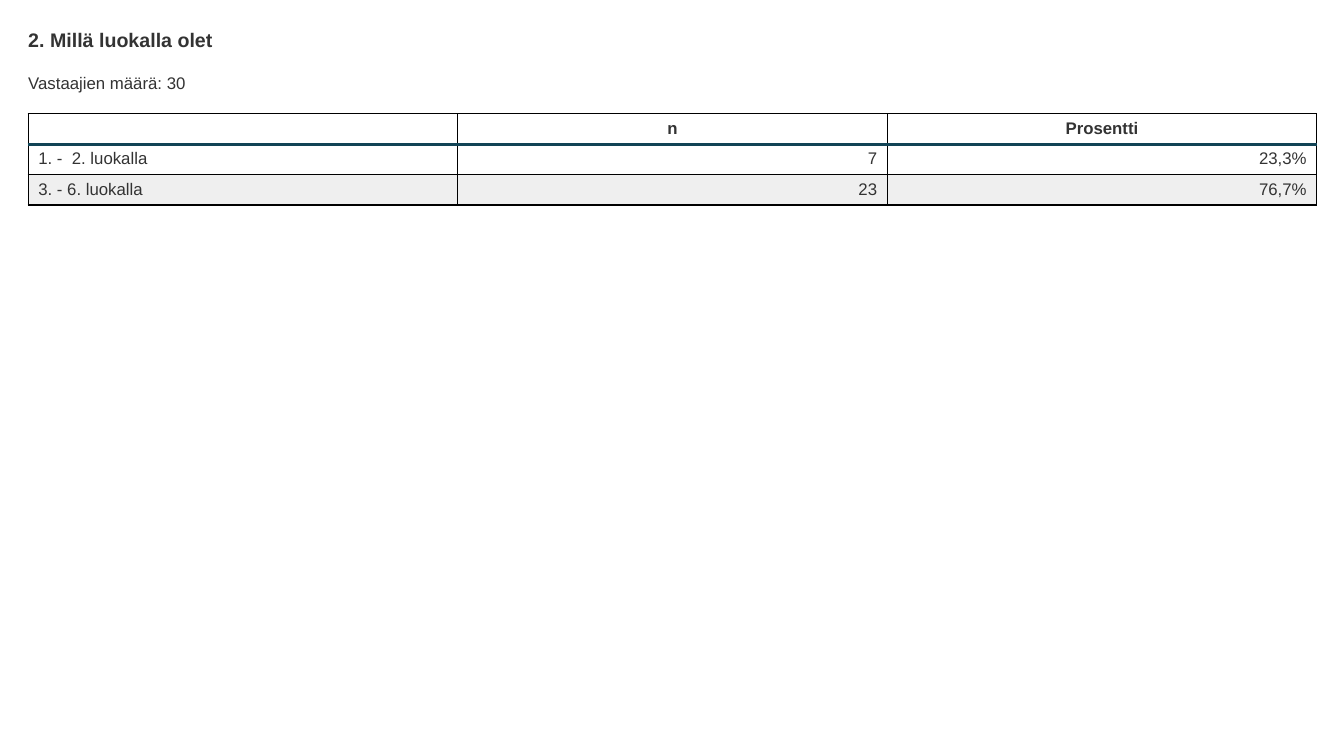
from lxml.etree import SubElement
from pptx import Presentation
from pptx.dml.color import RGBColor
from pptx.enum.text import MSO_ANCHOR, MSO_AUTO_SIZE, PP_ALIGN
from pptx.oxml.ns import qn
from pptx.util import Inches, Pt

COLORS = {
    "text": "333333",
    "border": "000000",
    "header_line": "124456",
    "white": "FFFFFF",
    "band": "EFEFEF",
}
LEFT, WIDTH, ROW_HEIGHT = 0.28, 12.78, 0.3


def format_text(text_frame, text, size, bold=False, alignment=PP_ALIGN.LEFT):
    text_frame.text = text
    paragraph = text_frame.paragraphs[0]
    paragraph.alignment = alignment
    for run in paragraph.runs:
        run.font.name = "Arial"
        run.font.size = Pt(size)
        run.font.bold = bold
        run.font.color.rgb = RGBColor.from_string(COLORS["text"])
    if not text:
        SubElement(paragraph._p, qn("a:endParaRPr"), sz=str(size * 100))


def add_border(cell, side, color, width):
    line = SubElement(cell._tc.get_or_add_tcPr(), qn(f"a:ln{side}"), w=str(Pt(width)))
    fill = SubElement(line, qn("a:solidFill"))
    SubElement(fill, qn("a:srgbClr"), val=COLORS[color])


presentation = Presentation()
presentation.slide_width = Inches(13.33)
presentation.slide_height = Inches(7.5)
slide = presentation.slides.add_slide(presentation.slide_layouts[5])

title = slide.shapes.title
title.left, title.top = Inches(LEFT), Inches(0.28)
title.width, title.height = Inches(WIDTH), Inches(0.23)
respondents = slide.shapes.add_textbox(
    Inches(LEFT), Inches(0.72), Inches(WIDTH), Inches(0.2)
)
for shape, text, size, bold in (
    (title, "2. Millä luokalla olet", 14, True),
    (respondents, "Vastaajien määrä: 30", 12, False),
):
    text_frame = shape.text_frame
    text_frame.margin_left = text_frame.margin_right = 0
    text_frame.margin_top = text_frame.margin_bottom = 0
    text_frame.word_wrap = True
    text_frame.auto_size = MSO_AUTO_SIZE.NONE
    text_frame.vertical_anchor = MSO_ANCHOR.TOP
    format_text(text_frame, text, size, bold)

rows = [
    ("", "n", "Prosentti"),
    ("1. -  2. luokalla", "7", "23,3%"),
    ("3. - 6. luokalla", "23", "76,7%"),
]
table = slide.shapes.add_table(
    len(rows), 3, Inches(LEFT), Inches(1.13), Inches(WIDTH), Inches(ROW_HEIGHT * len(rows))
).table
for column in table.columns:
    column.width = Inches(WIDTH / 3)

for row_index, values in enumerate(rows):
    table.rows[row_index].height = Inches(ROW_HEIGHT)
    is_header = row_index == 0
    for column_index, value in enumerate(values):
        cell = table.cell(row_index, column_index)
        if is_header:
            alignment = PP_ALIGN.CENTER
        else:
            alignment = PP_ALIGN.RIGHT if column_index else PP_ALIGN.LEFT
        format_text(cell.text_frame, value, 12, is_header, alignment)
        for side in "LRTB":
            if (row_index, side) in ((0, "B"), (1, "T")):
                add_border(cell, side, "header_line", 2)
            else:
                add_border(cell, side, "border", 1)
        cell.fill.solid()
        fill_name = "band" if row_index == 2 else "white"
        cell.fill.fore_color.rgb = RGBColor.from_string(COLORS[fill_name])

presentation.save("out.pptx")
